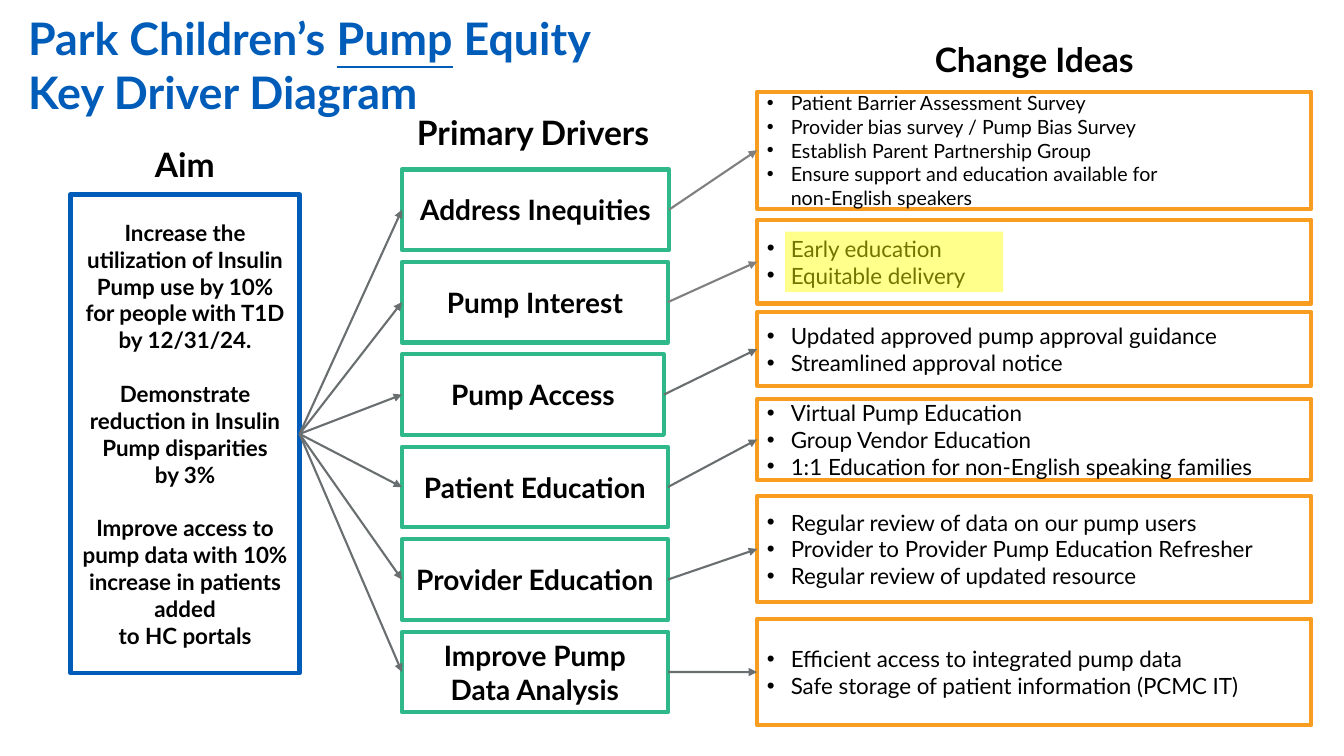
from lxml.etree import SubElement
from pptx import Presentation
from pptx.dml.color import RGBColor
from pptx.enum.shapes import MSO_CONNECTOR, MSO_SHAPE
from pptx.enum.text import MSO_ANCHOR, PP_ALIGN
from pptx.oxml.ns import qn
from pptx.util import Cm, Pt

BLUE, GREEN, ORANGE = "005CB9", "2FB88A", "F99D20"
BLACK, GRAY, LIGHT, YELLOW = "000000", "696F70", "808080", "FFFF00"

AIMS = [
    "Increase the utilization of Insulin Pump use by 10% for people with T1D by 12/31/24.",
    "Demonstrate reduction in Insulin Pump disparities\nby 3%",
    "Improve access to pump data with 10% increase in patients added\nto HC portals",
]

# driver lines, driver width, arrow colour, idea top, idea height, idea size, ideas
ROWS = [
    (["Address Inequities"], 6.73, LIGHT, 2.31, 2.95, 14,
     ["Patient Barrier Assessment Survey",
      "Provider bias survey / Pump Bias Survey",
      "Establish Parent Partnership Group",
      "Ensure support and education available for\nnon-English speakers"]),
    (["Pump Interest"], 6.7, LIGHT, 5.54, 2.11, 16,
     ["Early education", "Equitable delivery"]),
    (["Pump Access"], 6.6, GRAY, 7.87, 1.85, 16,
     ["Updated approved pump approval guidance",
      "Streamlined approval notice"]),
    (["Patient Education"], 6.7, GRAY, 10.06, 2.03, 16,
     ["Virtual Pump Education",
      "Group Vendor Education",
      "1:1 Education for non-English speaking families"]),
    (["Provider Education"], 6.7, GRAY, 12.5, 2.67, 16,
     ["Regular review of data on our pump users",
      "Provider to Provider Pump Education Refresher",
      "Regular review of updated resource"]),
    (["Improve Pump", "Data Analysis"], 6.7, GRAY, 15.6, 2.67, 16,
     ["Efficient access to integrated pump data",
      "Safe storage of patient information (PCMC IT)"]),
]


def rgb(code):
    return RGBColor.from_string(code)


class Board:
    def __init__(self, slide, face="Lato"):
        self.shapes = slide.shapes
        self.face = face

    def run(self, para, text, size, color=BLACK, bold=False, line=False, face=None):
        """Add text as runs, with a line break at each newline."""
        for i, part in enumerate(text.split("\n")):
            if i:
                para.add_line_break()
            run = para.add_run()
            run.text = part
            font = run.font
            font.name, font.size = face or self.face, Pt(size)
            font.bold, font.underline = bold, line
            font.color.rgb = rgb(color)

    def fill(self, frame, texts, size, bold=False, bullet=False, gap=0):
        """Write one paragraph for each text."""
        for i, text in enumerate(texts):
            para = frame.paragraphs[0] if i == 0 else frame.add_paragraph()
            para.alignment = PP_ALIGN.LEFT if bullet else PP_ALIGN.CENTER
            if i and gap:
                para.space_before = Pt(gap)
            if bullet:
                props = para._p.get_or_add_pPr()
                props.set("marL", str(Cm(0.6)))
                props.set("indent", str(-Cm(0.6)))
                SubElement(props, qn("a:buFont"), typeface="Arial")
                SubElement(props, qn("a:buChar"), char="•")
            self.run(para, text, size, bold=bold)

    def rect(self, x, y, w, h):
        box = self.shapes.add_shape(MSO_SHAPE.RECTANGLE, Cm(x), Cm(y), Cm(w), Cm(h))
        box.shadow.inherit = False
        return box

    def frame(self, x, y, w, h, color, texts, size, **style):
        """Draw an outlined box with text in it."""
        box = self.rect(x, y, w, h)
        box.fill.background()
        box.line.color.rgb = rgb(color)
        box.line.width = Pt(3)
        box.text_frame.word_wrap = True
        box.text_frame.vertical_anchor = MSO_ANCHOR.MIDDLE
        self.fill(box.text_frame, texts, size, **style)
        return box

    def label(self, x, y, w, h):
        """Add an empty text box and return its text frame."""
        frame = self.shapes.add_textbox(Cm(x), Cm(y), Cm(w), Cm(h)).text_frame
        frame.word_wrap = True
        return frame

    def head(self, x, y, w, *words):
        para = self.label(x, y, w, 1.27).paragraphs[0]
        para.alignment = PP_ALIGN.CENTER
        for i, word in enumerate(words):
            if i:
                self.run(para, " ", 18, face="Montserrat")
            self.run(para, word, 24, bold=True)

    def arrow(self, start, end, color):
        """Join the right side of one box to the left side of another."""
        link = self.shapes.add_connector(MSO_CONNECTOR.STRAIGHT, 0, 0, 0, 0)
        link.begin_connect(start, 3)
        link.end_connect(end, 1)
        link.line.color.rgb = rgb(color)
        link.line.width = Pt(1.5)
        SubElement(link.line._get_or_add_ln(), qn("a:tailEnd"), type="triangle")
        SubElement(link._element.spPr, qn("a:effectLst"))

    def glow(self, x, y, w, h, color, alpha):
        """Lay a see-through marker over text; alpha is in percent."""
        mark = self.rect(x, y, w, h)
        mark.fill.solid()
        mark.fill.fore_color.rgb = rgb(color)
        tint = mark._element.spPr.find(".//" + qn("a:srgbClr"))
        SubElement(tint, qn("a:alpha"), val=str(alpha * 1000))
        mark.line.fill.background()


def main():
    deck = Presentation()
    deck.slide_width, deck.slide_height = Cm(33.87), Cm(19.05)
    board = Board(deck.slides.add_slide(deck.slide_layouts[6]))

    title = board.label(0.71, 0.28, 17.27, 2.57)
    title.margin_left = title.margin_right = 0
    title.margin_top = title.margin_bottom = 0
    para = title.paragraphs[0]
    for text, line in [("Park Children’s ", False), ("Pump", True),
                       (" Equity\nKey Driver Diagram", False)]:
        board.run(para, text, 32, BLUE, bold=True, line=line)

    board.head(3.1, 3.51, 3.12, "Aim")
    board.head(10.03, 2.69, 6.81, "Primary", "Drivers")
    board.head(19.08, 0.86, 13.97, "Change Ideas")

    aim = board.frame(1.78, 4.9, 5.77, 12.07, BLUE, AIMS, 16, bold=True, gap=19.2)
    for i, (names, width, color, top, height, size, ideas) in enumerate(ROWS):
        driver = board.frame(10.13, 4.27 + 2.33 * i, width, 2.03, GREEN,
                             names, 20, bold=True)
        change = board.frame(19.08, top, 13.97, height, ORANGE,
                             ideas, size, bullet=True)
        board.arrow(aim, driver, GRAY)
        board.arrow(driver, change, color)
    board.glow(19.79, 5.84, 5.49, 1.52, YELLOW, 45)

    deck.save("out.pptx")


if __name__ == "__main__":
    main()
